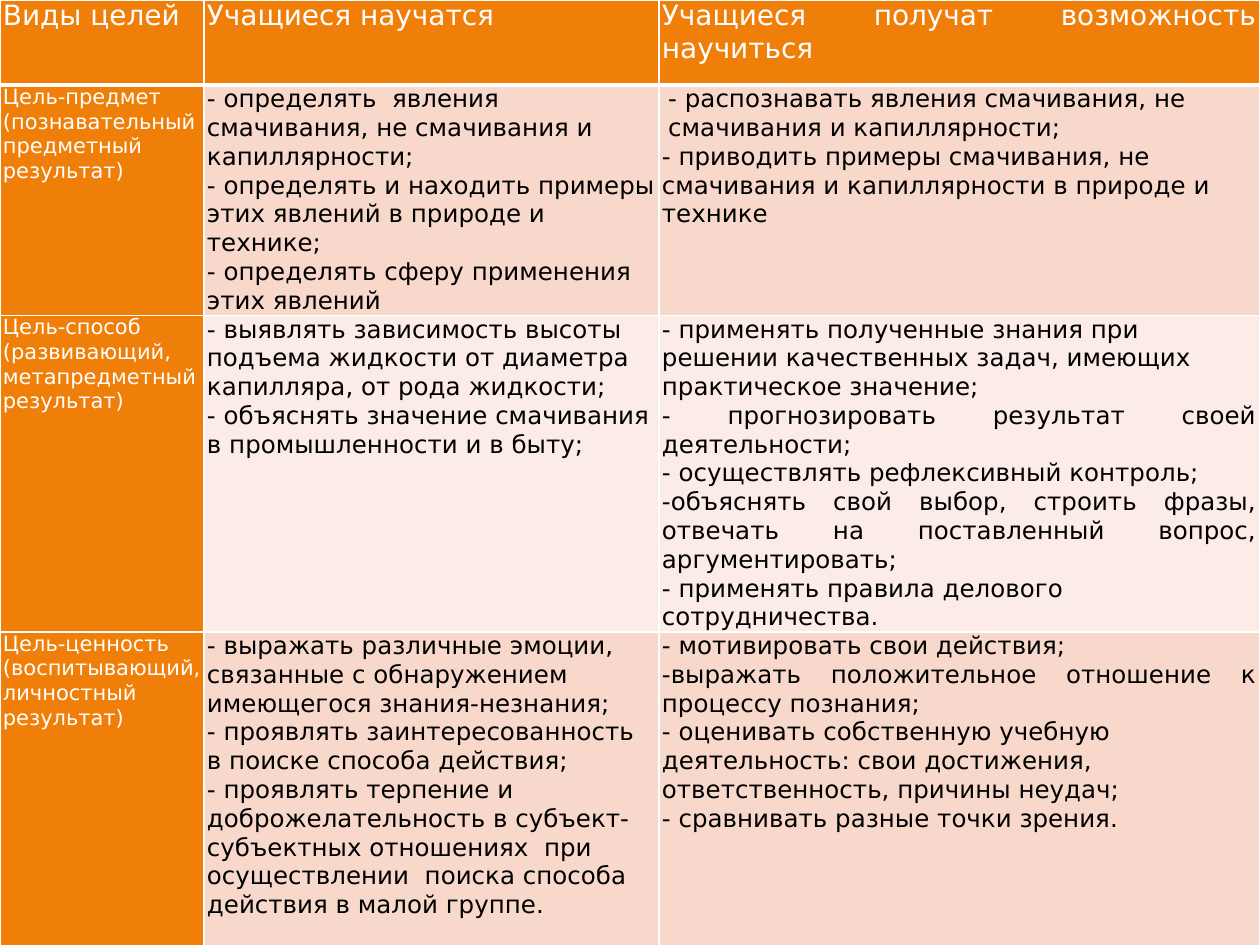
from lxml import etree
from pptx import Presentation
from pptx.dml.color import RGBColor
from pptx.enum import text
from pptx.oxml import ns
from pptx.util import Pt

ORANGE, WHITE, BLACK = "F07F09", "FFFFFF", "000000"
BANDS = [ORANGE, "F9D8CC", "FCECE7", "F9D8CC"]
COLUMNS = [116.6, 260, 343]
ROWS = [48.6, 130.4, 179, 182]
INDENTED = (1, 2, 0)
JUSTIFIED = {(2, 2, 1), (2, 2, 3), (3, 2, 1)}

goals = [
    [["Виды целей"], ["Учащиеся научатся"], ["Учащиеся получат возможность научиться"]],
    [
        ["Цель-предмет", "(познавательный предметный результат)"],
        [
            "- определять  явления смачивания, не смачивания и капиллярности;",
            "- определять и находить примеры этих явлений в природе и технике;",
            "- определять сферу применения этих явлений",
        ],
        [
            "- распознавать явления смачивания, не смачивания и капиллярности;",
            "- приводить примеры смачивания, не смачивания и капиллярности в природе и технике",
        ],
    ],
    [
        ["Цель-способ", "(развивающий, метапредметный результат)"],
        [
            "- выявлять зависимость высоты подъема жидкости от диаметра капилляра, от рода жидкости;",
            "- объяснять значение смачивания в промышленности и в быту;",
        ],
        [
            "- применять полученные знания при решении качественных задач, имеющих практическое значение;",
            "- прогнозировать результат своей деятельности;",
            "- осуществлять рефлексивный контроль;",
            "-объяснять свой выбор, строить фразы, отвечать на поставленный вопрос, аргументировать;",
            "- применять правила делового сотрудничества.",
        ],
    ],
    [
        ["Цель-ценность", "(воспитывающий, личностный результат)"],
        [
            "- выражать различные эмоции, связанные с обнаружением имеющегося знания-незнания;",
            "- проявлять заинтересованность в поиске способа действия;",
            "- проявлять терпение и доброжелательность в субъект-субъектных отношениях  при осуществлении  поиска способа действия в малой группе.",
        ],
        [
            "- мотивировать свои действия;",
            "-выражать положительное отношение к процессу познания;",
            "- оценивать собственную учебную деятельность: свои достижения, ответственность, причины неудач;",
            "- сравнивать разные точки зрения.",
        ],
    ],
]


def paint(fill, color):
    fill.solid()
    fill.fore_color.rgb = RGBColor.from_string(color)


def add_borders(cell, widths):
    properties = cell._tc.get_or_add_tcPr()
    for position, (side, width) in enumerate(widths.items()):
        line = etree.Element(ns.qn(f"a:ln{side}"), w=str(Pt(width)))
        solid = etree.SubElement(line, ns.qn("a:solidFill"))
        etree.SubElement(solid, ns.qn("a:srgbClr"), val=WHITE)
        properties.insert(position, line)


deck = Presentation()
deck.slide_width, deck.slide_height = Pt(720), Pt(540)
page = deck.slides.add_slide(deck.slide_layouts[6])
paint(page.background.fill, "E3DED1")

table = page.shapes.add_table(
    len(ROWS), len(COLUMNS), 0, 0, Pt(sum(COLUMNS)), Pt(sum(ROWS))
).table
for column, width in zip(table.columns, COLUMNS):
    column.width = Pt(width)
for row, height in zip(table.rows, ROWS):
    row.height = Pt(height)

margins = {"margin_left": Pt(1.7), "margin_right": Pt(1.7), "margin_top": 0, "margin_bottom": 0}
for r, row in enumerate(goals):
    for c, paragraphs in enumerate(row):
        cell = table.cell(r, c)
        for name, value in margins.items():
            setattr(cell, name, value)
        heading = r == 0 or c == 0
        paint(cell.fill, ORANGE if heading else BANDS[r])
        add_borders(cell, {"L": 1, "R": 1, "T": 1, "B": 3 if r == 0 else 1})
        size = 16 if r == 0 else 12 if c == 0 else 14
        font = {"name": "DejaVu Sans", "size": Pt(size), "bold": False}
        for p, words in enumerate(paragraphs):
            para = cell.text_frame.paragraphs[0] if p == 0 else cell.text_frame.add_paragraph()
            justified = heading or (r, c, p) in JUSTIFIED
            para.alignment = text.PP_ALIGN.JUSTIFY if justified else text.PP_ALIGN.LEFT
            if (r, c, p) == INDENTED:
                para._p.get_or_add_pPr().set("marL", str(Pt(3.6)))
            span = para.add_run()
            span.text = words
            for name, value in font.items():
                setattr(span.font, name, value)
            paint(span.font.fill, WHITE if heading else BLACK)

deck.save("out.pptx")
